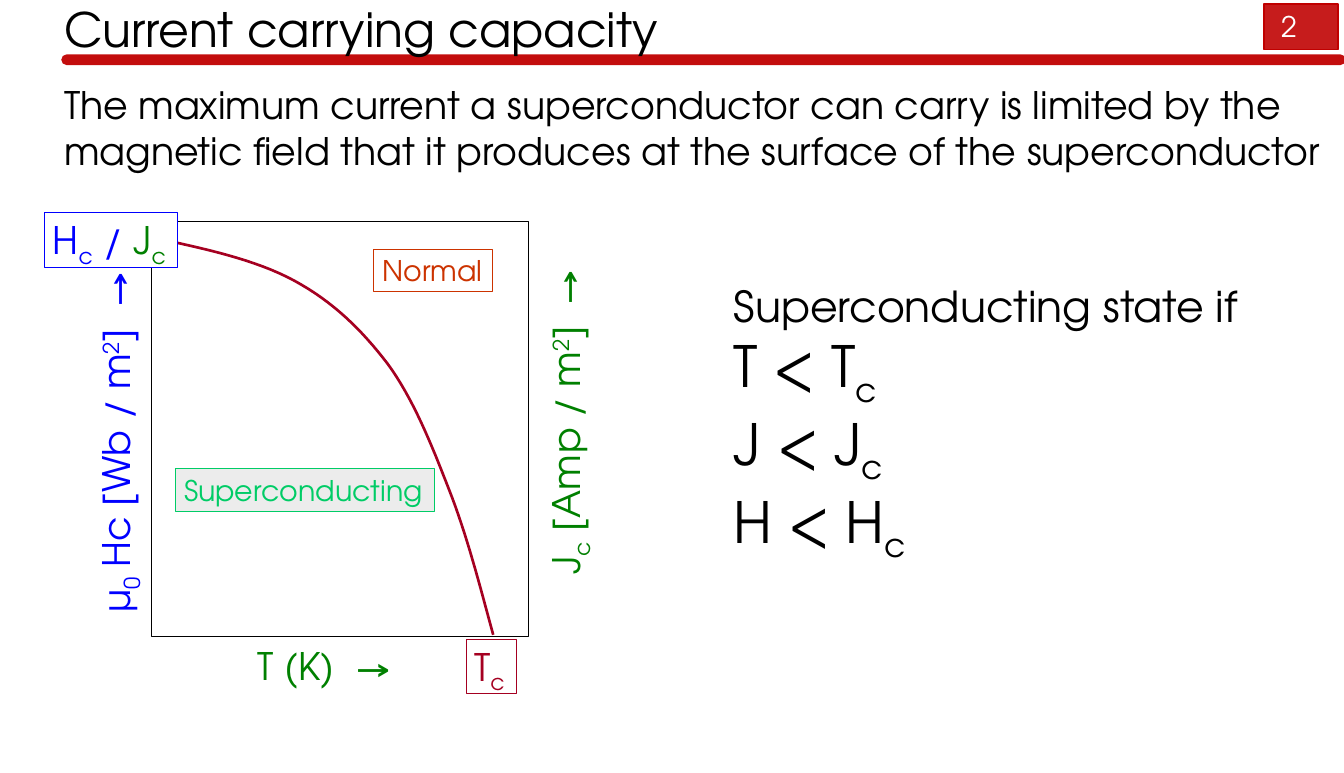
from typing import NamedTuple

from lxml import etree
from pptx import Presentation
from pptx.dml.color import RGBColor
from pptx.enum.shapes import MSO_CONNECTOR, MSO_SHAPE
from pptx.enum.text import MSO_ANCHOR, MSO_AUTO_SIZE, PP_ALIGN
from pptx.oxml.ns import qn
from pptx.util import Pt

RECT, LINE = MSO_SHAPE.RECTANGLE, MSO_CONNECTOR.STRAIGHT
TOP, MIDDLE = MSO_ANCHOR.TOP, MSO_ANCHOR.MIDDLE
LEFT, FIXED = PP_ALIGN.LEFT, MSO_AUTO_SIZE.NONE
FONT = "TeX Gyre Adventor"
BLACK, WHITE, RED = "000000", "FFFFFF", "C00000"
BLUE, GREEN, WINE = "0000FF", "008000", "A50021"
ORANGE, MINT, GREY = "CC3300", "00CC66", "EAEAEA"
SUB, SUPER = -25, 30
STEPS = 16


class Box(NamedTuple):
    left: float
    top: float
    width: float
    height: float


class Run(NamedTuple):
    text: str
    color: str = BLACK
    size: float = 32
    base: int = 0


class Label(NamedTuple):
    box: Box
    runs: list[Run]
    line: str = ""
    fill: str = ""
    alpha: int = 100
    turn: int = 0


class Point(NamedTuple):
    x: float
    y: float


def rgb(code: str) -> RGBColor:
    return RGBColor.from_string(code)


def fade(shape, route: str, alpha: int) -> None:
    """Set the opacity, in percent, of the colour found at route in spPr."""
    for color in shape._element.spPr.xpath(route + "/a:srgbClr"):
        etree.SubElement(color, qn("a:alpha")).set("val", str(alpha * 1000))


def place(shape, box: Box) -> None:
    shape.left, shape.top, shape.width, shape.height = map(Pt, box)


def paint(shape, fill: str, line: str, width: float, alpha: int = 100) -> None:
    if fill:
        shape.fill.solid()
        shape.fill.fore_color.rgb = rgb(fill)
        if alpha < 100:
            fade(shape, "a:solidFill", alpha)
    else:
        shape.fill.background()
    if line:
        shape.line.color.rgb = rgb(line)
        shape.line.width = Pt(width)


def write(shape, rows: list[list[Run]], anchor=TOP, wrap: bool = False, after: float = 0) -> None:
    frame = shape.text_frame
    frame.auto_size, frame.word_wrap, frame.vertical_anchor = FIXED, wrap, anchor
    for i, row in enumerate(rows):
        para = frame.paragraphs[0] if i == 0 else frame.add_paragraph()
        para.alignment = LEFT
        para.space_before, para.space_after = Pt(0), Pt(after)
        if shape.is_placeholder:
            props = para._p.get_or_add_pPr()
            props.set("marL", "0")
            props.set("indent", "0")
            etree.SubElement(props, qn("a:buNone"))
        for item in row:
            run = para.add_run()
            run.text = item.text
            run.font.name, run.font.size = FONT, Pt(item.size)
            run.font.color.rgb = rgb(item.color)
            if item.base:
                run.font._element.set("baseline", str(item.base * 1000))


def add_rect(slide, box: Box, fill: str, line: str, width: float, alpha: int = 100) -> None:
    rect = slide.shapes.add_shape(RECT, *map(Pt, box))
    rect.shadow.inherit = False
    paint(rect, fill, line, width, alpha)


def add_label(slide, label: Label) -> None:
    shape = slide.shapes.add_textbox(*map(Pt, label.box))
    shape.rotation = label.turn
    paint(shape, label.fill, label.line, 0.5, label.alpha)
    write(shape, [label.runs])


def add_rule(slide) -> None:
    rule = slide.shapes.add_connector(LINE, Pt(56.2), Pt(50.4), Pt(1131), Pt(50.4))
    rule.line.color.rgb = rgb(RED)
    rule.line.width = Pt(9)
    fade(rule, "a:ln/a:solidFill", 95)
    props = rule._element.spPr
    props.find(qn("a:ln")).set("cap", "rnd")
    etree.SubElement(props, qn("a:effectLst"))


def bend(a: Point, b: Point, c: Point, d: Point) -> list[Point]:
    """Return points along the cubic curve from a to d."""
    points = []
    for i in range(1, STEPS + 1):
        t = i / STEPS
        parts = ((1 - t) ** 3, 3 * t * (1 - t) ** 2, 3 * t * t * (1 - t), t ** 3)
        points.append(Point(sum(p * q.x for p, q in zip(parts, (a, b, c, d))),
                            sum(p * q.y for p, q in zip(parts, (a, b, c, d)))))
    return points


def add_curve(slide, knots: list[Point]) -> None:
    points = [p for i in range(0, len(knots) - 1, 3) for p in bend(*knots[i:i + 4])]
    pen = slide.shapes.build_freeform(Pt(knots[0].x), Pt(knots[0].y))
    pen.add_line_segments([(Pt(p.x), Pt(p.y)) for p in points], close=False)
    curve = pen.convert_to_shape()
    curve.shadow.inherit = False
    paint(curve, "", WINE, 2.25)


CURVE = [Point(127.4, 200.2), Point(171.4, 209.5), Point(215.3, 218.9),
         Point(248.4, 236.9), Point(281.5, 254.9), Point(305.3, 278.6),
         Point(326.9, 306.7), Point(348.5, 336.2), Point(363.6, 373.7),
         Point(378.7, 412.6), Point(393.8, 450.7), Point(404.6, 493.2),
         Point(416.2, 535.7)]

AXES = [
    Label(Box(-55.4, 347.8, 306.7, 46),
          [Run("μ", BLUE), Run("0", BLUE, base=SUB), Run(" Hc [Wb / m", BLUE),
           Run("2", BLUE, base=SUPER), Run("]  →", BLUE)], turn=270),
    Label(Box(210.2, 538.6, 130.3, 46), [Run("T (K)  →", GREEN)]),
    Label(Box(339.1, 330.5, 276.5, 46),
          [Run("J", GREEN), Run("c", GREEN, base=SUB), Run(" [Amp / m", GREEN),
           Run("2", GREEN, base=SUPER), Run("]  →", GREEN)], turn=270),
]

TAGS = [
    Label(Box(393.1, 539.3, 42.5, 46),
          [Run("T", WINE), Run("c", WINE, base=SUB)], WINE, WHITE),
    Label(Box(37.4, 179.3, 112.3, 46),
          [Run("H", BLUE), Run("c", BLUE, base=SUB), Run(" / ", BLUE),
           Run("J", GREEN), Run("c", GREEN, base=SUB)], BLUE, WHITE),
    Label(Box(315.4, 210.2, 100, 36), [Run("Normal", ORANGE, 24)], ORANGE, WHITE, 80),
    Label(Box(148.3, 395.3, 218.2, 36), [Run("Superconducting", MINT, 24)], MINT, GREY, 90),
]

CLAIM = ("The maximum current a superconductor can carry is limited by the "
         "magnetic field that it produces at the surface of the superconductor")


def main() -> None:
    deck = Presentation()
    deck.slide_width, deck.slide_height = Pt(1134), Pt(652.3)
    slide = deck.slides.add_slide(deck.slide_layouts[3])
    title, body, rules = slide.placeholders

    add_rect(slide, Box(1066.3, 3.6, 62.6, 38.2), RED, RED, 1.5, 89)
    add_rule(slide)
    add_label(slide, Label(Box(1074.2, 4.3, 29, 36), [Run("2", WHITE, 24)]))
    for holder in (title, body, rules):
        slide.shapes._spTree.append(holder._element)  # text lies over the red rule

    place(title, Box(46.8, -4.3, 921.6, 56.2))
    write(title, [[Run("Current carrying capacity", size=40)]], MIDDLE, True)
    place(body, Box(46.8, 68.4, 1087.2, 77.8))
    write(body, [[Run(CLAIM)]], MIDDLE, True, 7.1)
    place(rules, Box(612, 232.6, 446.4, 225.4))
    write(rules, [[Run("Superconducting state if", size=36)]] + [
        [Run(f"{name} < {name}", size=48), Run("c", size=48, base=SUB)] for name in "TJH"])

    for label in AXES:
        add_label(slide, label)
    add_rect(slide, Box(127.4, 186.5, 318.2, 350.6), "", BLACK, 0.75)
    add_curve(slide, CURVE)
    for label in TAGS:
        add_label(slide, label)
    deck.save("out.pptx")


if __name__ == "__main__":
    main()
